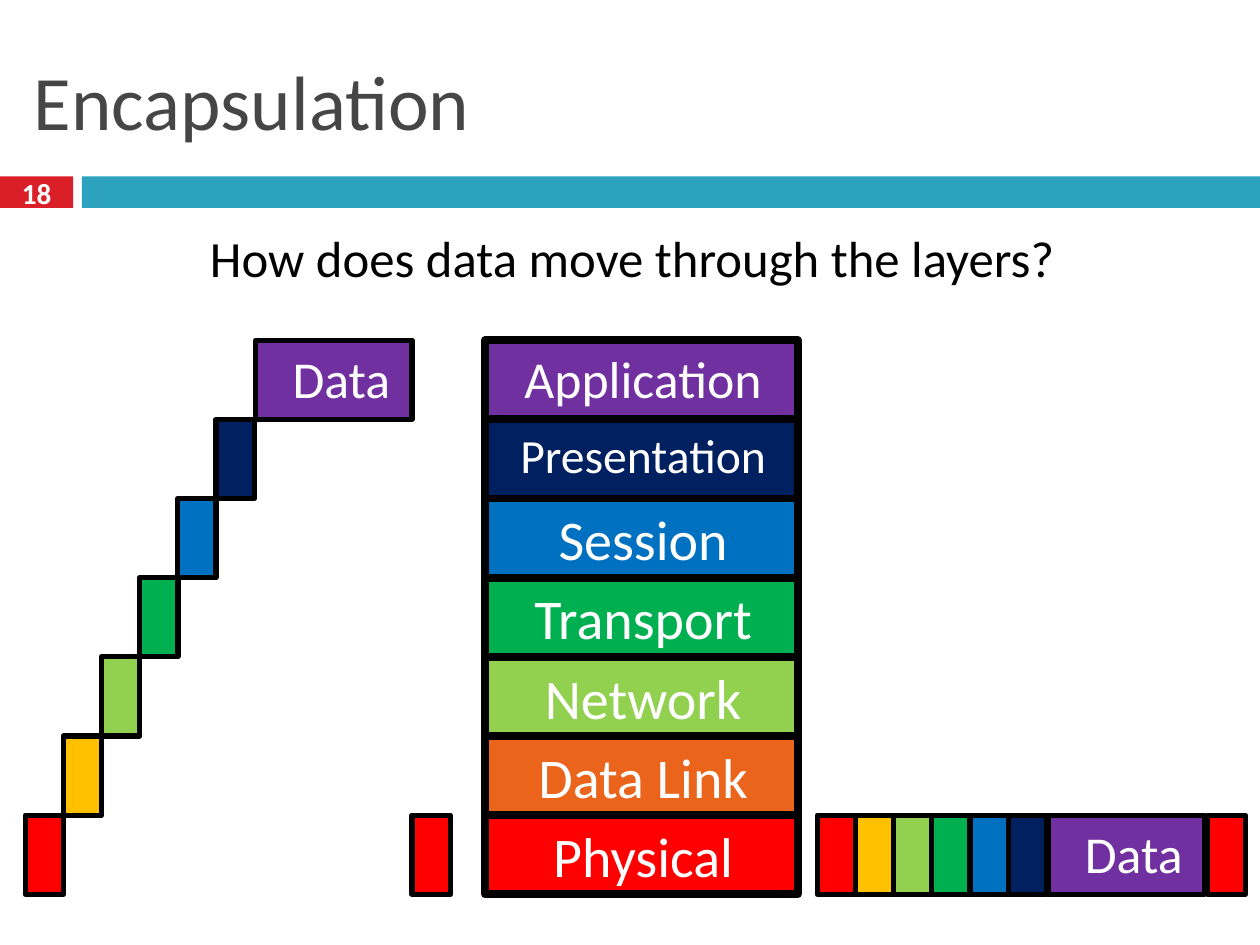
from lxml import etree
from pptx import Presentation
from pptx.dml.color import RGBColor
from pptx.enum.shapes import MSO_SHAPE
from pptx.enum.text import MSO_ANCHOR, MSO_AUTO_SIZE, PP_ALIGN
from pptx.oxml.ns import qn
from pptx.util import Pt

WHITE = RGBColor(0xFF, 0xFF, 0xFF)
BLACK = RGBColor(0x00, 0x00, 0x00)
GRAY = RGBColor(0x46, 0x46, 0x46)
CRIMSON = RGBColor(0xDA, 0x1F, 0x28)
TEAL = RGBColor(0x2D, 0xA2, 0xBF)
PURPLE = RGBColor(0x70, 0x30, 0xA0)
NAVY = RGBColor(0x00, 0x20, 0x60)
BLUE = RGBColor(0x00, 0x70, 0xC0)
GREEN = RGBColor(0x00, 0xB0, 0x50)
LIME = RGBColor(0x92, 0xD0, 0x50)
AMBER = RGBColor(0xFF, 0xC0, 0x00)
ORANGE = RGBColor(0xEB, 0x64, 0x1B)
RED = RGBColor(0xFF, 0x00, 0x00)

prs = Presentation()
prs.slide_width, prs.slide_height = Pt(720), Pt(540)
slide = prs.slides.add_slide(prs.slide_layouts[1])


def add_box(left, top, width, height, fill, border=0):
    box = slide.shapes.add_shape(
        MSO_SHAPE.RECTANGLE, Pt(left), Pt(top), Pt(width), Pt(height))
    box.shadow.inherit = False
    box.fill.solid()
    box.fill.fore_color.rgb = fill
    if border:
        box.line.color.rgb = BLACK
        box.line.width = Pt(border)
    else:
        box.line.fill.background()
    return box


def write(holder, text, size, color, align=PP_ALIGN.CENTER,
          anchor=MSO_ANCHOR.TOP, indent=None, bold=False):
    frame = holder.text_frame
    frame.text = text
    frame_format = {"word_wrap": True, "auto_size": MSO_AUTO_SIZE.NONE,
                    "vertical_anchor": anchor}
    for name, value in frame_format.items():
        setattr(frame, name, value)
    paragraph = frame.paragraphs[0]
    paragraph.alignment = align
    paragraph.space_before = Pt(0)
    font_format = {"name": "Calibri", "size": Pt(size), "bold": bold}
    for name, value in font_format.items():
        setattr(paragraph.runs[0].font, name, value)
    paragraph.runs[0].font.color.rgb = color
    if indent is not None:
        properties = paragraph._p.get_or_add_pPr()
        properties.set("marL", str(Pt(indent)))
        properties.set("indent", "0")
        etree.SubElement(properties, qn("a:buNone"))


add_box(0, 100.8, 41.8, 18, CRIMSON)
add_box(46.8, 100.8, 673.2, 18, TEAL)

title = slide.shapes.title
question = slide.placeholders[1]
places = [(title, (12.2, 18, 696.2, 77.8)), (question, (14.4, 126, 694.1, 46.8))]
for holder, place in places:
    holder.left, holder.top, holder.width, holder.height = map(Pt, place)
page_number = slide.shapes.add_textbox(Pt(0), Pt(98.6), Pt(41.8), Pt(23.8))
write(title, "Encapsulation", 44, GRAY, PP_ALIGN.LEFT, MSO_ANCHOR.MIDDLE)
write(question, "How does data move through the layers?", 29, BLACK, indent=0)
write(page_number, "18", 16.6, WHITE, anchor=MSO_ANCHOR.MIDDLE, bold=True)

STACK_TOP, ROW = 194.4, 45.24
BOTTOM = STACK_TOP + 6 * ROW
HEADER_WIDTH, DATA_WIDTH = 21.9, 89.3
INDENT = 8.6

layers = [
    ("Application", 29.6, PURPLE),
    ("Presentation", 27.2, NAVY),
    ("Session", 32, BLUE),
    ("Transport", 32, GREEN),
    ("Network", 32, LIME),
    ("Data Link", 32, ORANGE),
    ("Physical", 32, RED),
]
for row, (layer, size, color) in enumerate(layers):
    top = STACK_TOP + row * ROW
    add_box(277.2, top, 178.6, ROW, color, 4.5)
    label = slide.shapes.add_textbox(Pt(275.2), Pt(top), Pt(176.2), Pt(ROW))
    write(label, layer, size, WHITE, indent=INDENT)

for left, top in [(146.2, STACK_TOP), (599, BOTTOM)]:
    data = add_box(left, top, DATA_WIDTH, ROW, PURPLE, 3)
    write(data, "Data", 29.6, WHITE, indent=INDENT)

headers = [NAVY, BLUE, GREEN, LIME, AMBER, RED]
for step, color in enumerate(headers):
    add_box(123.4 - 21.8 * step, STACK_TOP + (step + 1) * ROW,
            HEADER_WIDTH, ROW, color, 3)
    add_box(576 - 21.8 * step, BOTTOM, HEADER_WIDTH, ROW, color, 3)

for trailer_left in (235.4, 689.8):
    add_box(trailer_left, BOTTOM, HEADER_WIDTH, ROW, RED, 3)

prs.save("out.pptx")
